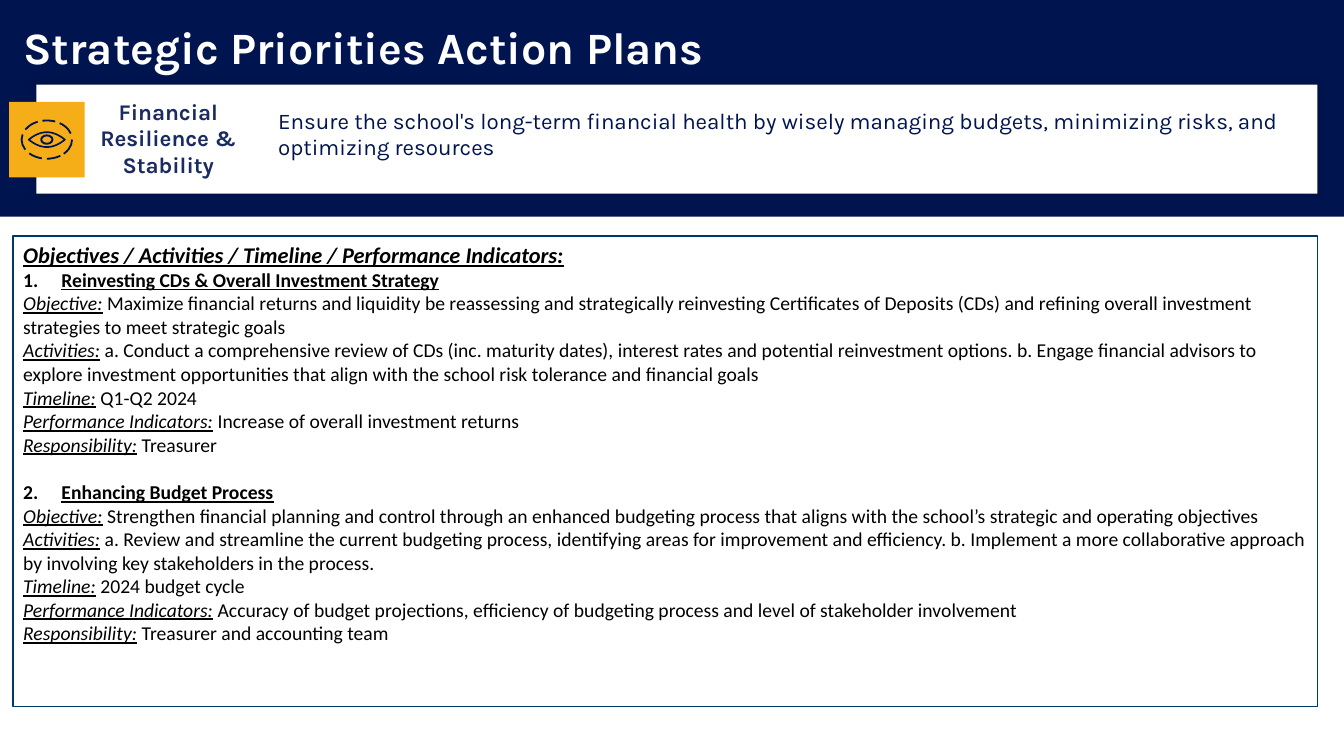
from collections import namedtuple

from lxml import etree
from pptx import Presentation
from pptx import util as u
from pptx.dml.color import RGBColor
from pptx.enum import shapes, text
from pptx.oxml import ns

COLORS = {"navy": "00144F", "label": "192B60", "gold": "F5AE18",
          "frame": "003865", "white": "FFFFFF", "black": "000000"}
COLUMNS, ROWS = 160, 90
UNIT = u.Inches(7.5) / ROWS
INDENT = u.Inches(0.38)

Box = namedtuple("Box", "left top width height")

OBJECTIVES_TITLE = "Objectives / Activities / Timeline / Performance Indicators:"
LABELS = ["Objective:", "Activities:", "Timeline:", "Performance Indicators:",
          "Responsibility:"]
PLANS = [
    ("Reinvesting CDs & Overall Investment Strategy", [
        "Maximize financial returns and liquidity be reassessing and strategically "
        "reinvesting Certificates of Deposits (CDs) and refining overall investment "
        "strategies to meet strategic goals",
        "a. Conduct a comprehensive review of CDs (inc. maturity dates), interest rates "
        "and potential reinvestment options. b. Engage financial advisors to explore "
        "investment opportunities that align with the school risk tolerance and "
        "financial goals",
        "Q1-Q2 2024",
        "Increase of overall investment returns",
        "Treasurer"]),
    ("Enhancing Budget Process", [
        "Strengthen financial planning and control through an enhanced budgeting process "
        "that aligns with the school’s strategic and operating objectives",
        "a. Review and streamline the current budgeting process, identifying areas for "
        "improvement and efficiency. b. Implement a more collaborative approach by "
        "involving key stakeholders in the process.",
        "2024 budget cycle",
        "Accuracy of budget projections, efficiency of budgeting process and level of "
        "stakeholder involvement",
        "Treasurer and accounting team"]),
]


def color(name):
    return RGBColor.from_string(COLORS[name])


def within(box, column, row, columns, rows):
    """Box measured in grid units from the corner of another box."""
    return Box(round(box.left + column * UNIT), round(box.top + row * UNIT),
               round(columns * UNIT), round(rows * UNIT))


def place(shape, box):
    for side, value in box._asdict().items():
        setattr(shape, side, value)


def add_rectangle(slide, box, fill):
    shape = slide.shapes.add_shape(shapes.MSO_SHAPE.RECTANGLE, *box)
    shape.shadow.inherit = False
    shape.fill.solid()
    shape.fill.fore_color.rgb = color(fill)
    shape.line.fill.background()
    return shape


def add_soft_shadow(shape):
    effects = shape.element.spPr.find(ns.qn("a:effectLst"))
    shadow = etree.SubElement(effects, ns.qn("a:outerShdw"), blurRad=str(u.Pt(5)))
    black = etree.SubElement(shadow, ns.qn("a:srgbClr"), val=COLORS["black"])
    etree.SubElement(black, ns.qn("a:alpha"), val="20000")


def add_run(paragraph, words, ink="black", **formats):
    run = paragraph.add_run()
    run.text = words
    run.font.color.rgb = color(ink)
    for name, value in formats.items():
        setattr(run.font, name, value)


def set_frame(frame, **formats):
    formats = {"word_wrap": True, "auto_size": text.MSO_AUTO_SIZE.NONE,
               "vertical_anchor": text.MSO_ANCHOR.TOP, **formats}
    for name, value in formats.items():
        setattr(frame, name, value)


def add_caption(slide, box, words, ink, align, bold):
    frame = slide.shapes.add_textbox(*box).text_frame
    set_frame(frame, margin_left=0, margin_right=0)
    paragraph = frame.paragraphs[0]
    paragraph.alignment = align
    add_run(paragraph, words, ink, name="Karla", size=u.Pt(16), bold=bold)


def draw_outline(shape, width):
    shape.shadow.inherit = False
    shape.fill.background()
    shape.line.color.rgb = color("navy")
    shape.line.width = u.Pt(width)


def draw_eye(slide, tile):
    ring = within(tile, 1.5, 2.22, 6, 4.56)
    dashes = [(0, 40), (50, 90), (105, 142), (155, 192), (205, 243), (257, 295),
              (308, 346)]
    for start, end in dashes:
        arc = slide.shapes.add_shape(shapes.MSO_SHAPE.ARC, *ring)
        arc.adjustments[0], arc.adjustments[1] = start * 0.6, end * 0.6
        draw_outline(arc, 1.3)

    center = within(tile, 4.5, 4.5, 0, 0)
    steps = [step / 10 for step in range(-10, 11)]
    curve = [(x, x * x - 1) for x in steps] + [(-x, 1 - x * x) for x in steps]
    points = [(center.left + x * 2.15 * UNIT, center.top + y * 0.88 * UNIT)
              for x, y in curve]
    builder = slide.shapes.build_freeform(*points[0])
    builder.add_line_segments(points[1:], close=True)
    draw_outline(builder.convert_to_shape(), 1.2)

    pupil = slide.shapes.add_shape(shapes.MSO_SHAPE.OVAL,
                                   *within(tile, 3.83, 4, 1.34, 1))
    draw_outline(pupil, 1.4)


def build_header(slide, box):
    add_rectangle(slide, box, "navy")
    title = slide.shapes.title
    slide.shapes.element.append(title.element)
    place(title, within(box, 1.56, -1.44, 142.8, 14.88))
    set_frame(title.text_frame, vertical_anchor=text.MSO_ANCHOR.MIDDLE)
    paragraph = title.text_frame.paragraphs[0]
    paragraph.alignment = text.PP_ALIGN.LEFT
    paragraph.line_spacing = 0.9
    add_run(paragraph, "Strategic Priorities Action Plans", "white",
            name="Karla", size=u.Pt(32), bold=True)

    add_soft_shadow(add_rectangle(slide, within(box, 4.32, 10.08, 152.52, 12.96), "white"))
    tile = within(box, 1.08, 12.12, 9, 9)
    add_rectangle(slide, tile, "gold")
    add_caption(slide, within(box, 9, 11.04, 22.08, 12.96),
                "Financial Resilience & Stability", "label", text.PP_ALIGN.CENTER, True)
    add_caption(slide, within(box, 33.12, 12.12, 120.24, 9.96),
                "Ensure the school's long-term financial health by wisely managing "
                "budgets, minimizing risks, and optimizing resources",
                "navy", text.PP_ALIGN.LEFT, False)
    draw_eye(slide, tile)


def add_line(frame, number=None):
    """Start a paragraph, numbered with a hanging indent if a number is given."""
    paragraph = frame.paragraphs[0]
    if paragraph.runs:
        paragraph = frame.add_paragraph()
    paragraph.space_before = u.Pt(0)
    hang = INDENT if number else 0
    properties = paragraph._p.get_or_add_pPr()
    properties.set("marL", str(hang))
    properties.set("indent", str(-hang))
    if number:
        etree.SubElement(properties, ns.qn("a:buFont"), typeface="+mj-lt")
        etree.SubElement(properties, ns.qn("a:buAutoNum"), type="arabicPeriod",
                         startAt=str(number))
    else:
        etree.SubElement(properties, ns.qn("a:buNone"))
    return paragraph


def build_plans(slide, box):
    body = slide.placeholders[1]
    slide.shapes.element.append(body.element)
    place(body, box)
    body.line.color.rgb = color("frame")
    body.line.width = u.Pt(1)
    frame = body.text_frame
    set_frame(frame)
    plain = {"name": "Calibri", "size": u.Pt(14)}
    heading = {**plain, "bold": True, "underline": True}
    add_run(add_line(frame), OBJECTIVES_TITLE,
            **{**heading, "size": u.Pt(16), "italic": True})
    for number, (name, details) in enumerate(PLANS, 1):
        paragraph = add_line(frame, number)
        if number > 1:
            paragraph.space_before = u.Pt(17)
        add_run(paragraph, name, **heading)
        for label, detail in zip(LABELS, details):
            paragraph = add_line(frame)
            add_run(paragraph, label, **plain, italic=True, underline=True)
            add_run(paragraph, " " + detail, **plain)


def main():
    presentation = Presentation()
    presentation.slide_width = round(COLUMNS * UNIT)
    presentation.slide_height = round(ROWS * UNIT)
    slide = presentation.slides.add_slide(presentation.slide_layouts[1])
    page = Box(0, 0, presentation.slide_width, presentation.slide_height)
    build_header(slide, within(page, 0, 0, COLUMNS, 25.8))
    build_plans(slide, within(page, 1.56, 28.08, 155.28, 56.04))
    presentation.save("out.pptx")


if __name__ == "__main__":
    main()
